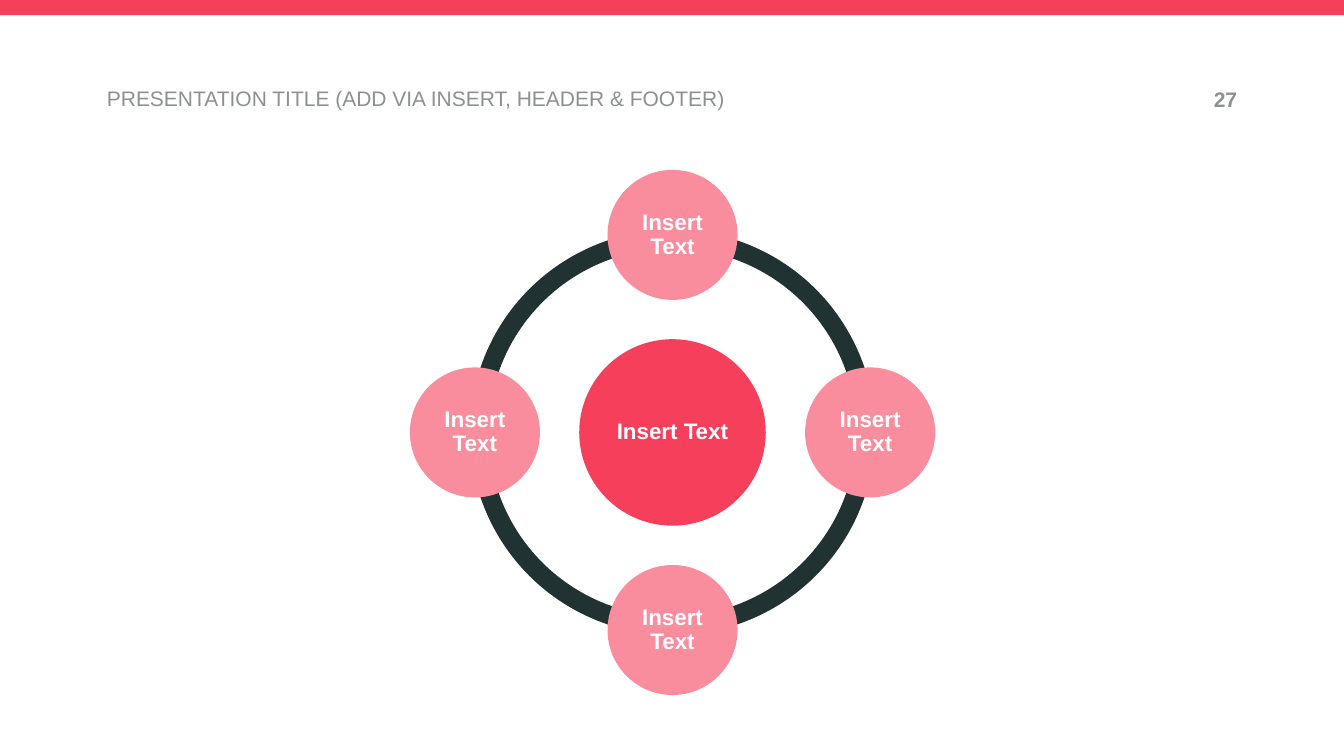
import math

import pptx
import pptx.dml.color
import pptx.enum.shapes
import pptx.enum.text
import pptx.util

Inches = pptx.util.Inches
MSO_SHAPE = pptx.enum.shapes.MSO_SHAPE
PP_ALIGN = pptx.enum.text.PP_ALIGN
MSO_ANCHOR = pptx.enum.text.MSO_ANCHOR


def rgb(value):
    return pptx.dml.color.RGBColor.from_string(value)


class Deck:
    FONT = "Arial"
    RED = "F53F5B"
    PINK = "F98C9D"
    DARK = "203232"
    GREY = "8D9090"
    WHITE = "FFFFFF"

    def __init__(self):
        self.prs = pptx.Presentation()
        self.prs.slide_width = Inches(13.33)
        self.prs.slide_height = Inches(7.5)
        self.s = self.prs.slides.add_slide(self.prs.slide_layouts[6])

    def shape(self, kind, x, y, w, h, fill):
        sp = self.s.shapes.add_shape(kind, Inches(x), Inches(y), Inches(w), Inches(h))
        sp.shadow.inherit = False
        sp.fill.solid()
        sp.fill.fore_color.rgb = rgb(fill)
        sp.line.fill.background()
        return sp

    def set_text(self, sp, text, size, color, bold, align, inset=0):
        tf = sp.text_frame
        tf.word_wrap = True
        tf.margin_left = tf.margin_right = Inches(inset)
        tf.margin_top = tf.margin_bottom = Inches(inset)
        tf.text = text
        p = tf.paragraphs[0]
        p.alignment = align
        r = p.runs[0]
        r.font.name = self.FONT
        r.font.size = pptx.util.Pt(size)
        r.font.bold = bold
        r.font.color.rgb = rgb(color)
        return tf

    def label(self, text, x, y, w, h, bold=False, align=PP_ALIGN.LEFT):
        sp = self.s.shapes.add_textbox(Inches(x), Inches(y), Inches(w), Inches(h))
        self.set_text(sp, text, 15, self.GREY, bold, align)

    def arc(self, cx, cy, size, start):
        sp = self.shape(MSO_SHAPE.BLOCK_ARC, cx - size / 2, cy - size / 2, size, size, self.DARK)
        sp.adjustments[0] = start * 0.6
        sp.adjustments[1] = (start + 90) % 360 * 0.6
        sp.adjustments[2] = 0.046

    def circle(self, cx, cy, size, fill, text):
        sp = self.shape(MSO_SHAPE.OVAL, cx - size / 2, cy - size / 2, size, size, fill)
        tf = self.set_text(sp, text, 16, self.WHITE, True, PP_ALIGN.CENTER, 0.02)
        tf.vertical_anchor = MSO_ANCHOR.MIDDLE
        tf.paragraphs[0].line_spacing = 0.9


def main():
    deck = Deck()
    deck.shape(MSO_SHAPE.RECTANGLE, 0, 0, 13.33, 0.15, deck.RED)
    deck.label("PRESENTATION TITLE (ADD VIA INSERT, HEADER & FOOTER)", 1.06, 0.85, 7.85, 0.25)
    deck.label("27", 10.74, 0.86, 1.53, 0.25, True, PP_ALIGN.RIGHT)

    cx, cy, orbit = 6.67, 4.29, 1.96
    for start in (180, 90, 0, 270):
        deck.arc(cx, cy, 4.02, start)
    deck.circle(cx, cy, 1.85, deck.RED, "Insert Text")
    for angle in (-90, 0, 90, 180):
        turn = math.radians(angle)
        x = cx + orbit * math.cos(turn)
        y = cy + orbit * math.sin(turn)
        deck.circle(x, y, 1.29, deck.PINK, "Insert Text")

    deck.prs.save("out.pptx")


if __name__ == "__main__":
    main()
